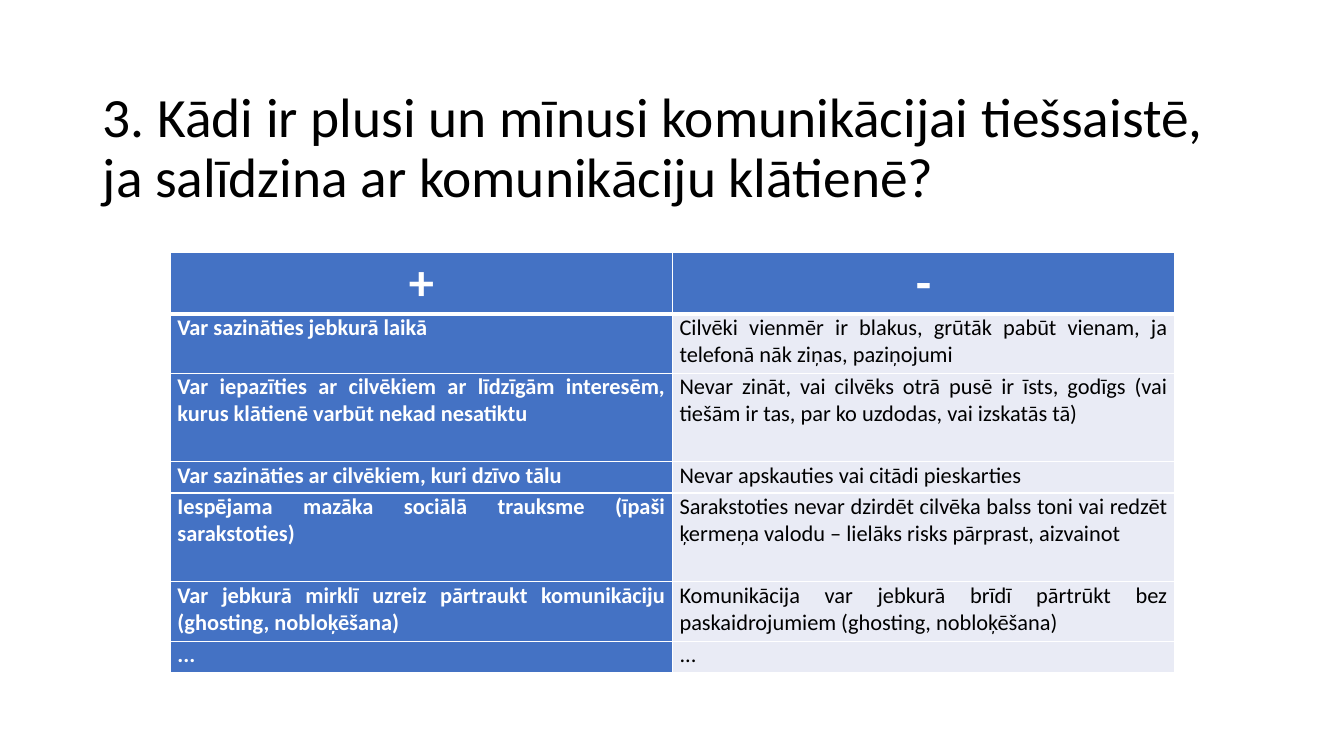
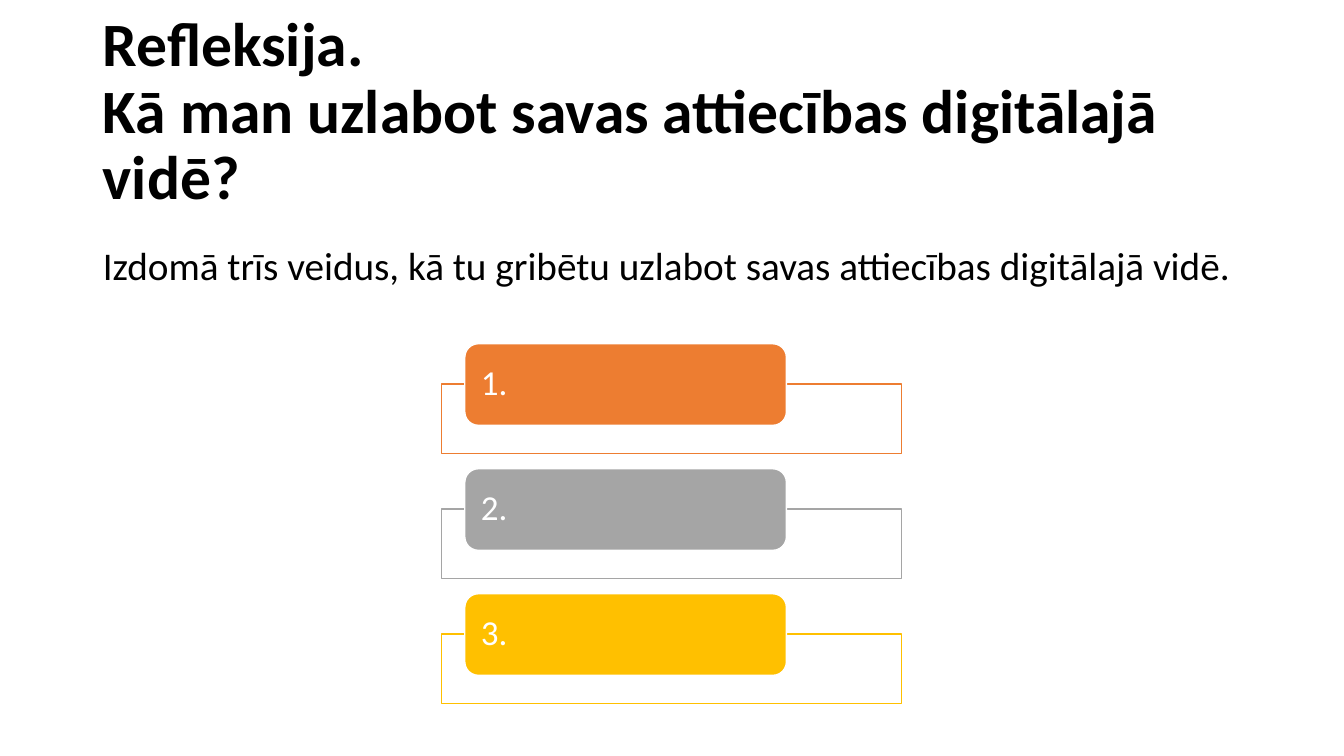
from dataclasses import dataclass

from lxml import etree
from pptx import Presentation
from pptx.dml.color import RGBColor
from pptx.enum.shapes import MSO_SHAPE
from pptx.enum.text import MSO_ANCHOR, MSO_AUTO_SIZE, PP_ALIGN
from pptx.oxml.ns import qn
from pptx.util import Inches, Pt

LEFT, CENTER, JUSTIFY = PP_ALIGN.LEFT, PP_ALIGN.CENTER, PP_ALIGN.JUSTIFY
TOP, MIDDLE = MSO_ANCHOR.TOP, MSO_ANCHOR.MIDDLE
NO_AUTOFIT = MSO_AUTO_SIZE.NONE
RECT, ROUNDED = MSO_SHAPE.RECTANGLE, MSO_SHAPE.ROUNDED_RECTANGLE
TITLE_AND_BODY, TITLE_ONLY = 1, 5


@dataclass(frozen=True)
class Theme:
    font: str = "Calibri"
    text: str = "000000"
    paper: str = "FFFFFF"
    header: str = "4472C4"
    cell: str = "E9EBF5"
    accents: tuple = ("ED7D31", "A5A5A5", "FFC000")
    title_size: float = 44
    long_title_size: float = 39.6
    body_size: float = 28
    label_size: float = 25
    sign_size: float = 36
    cell_size: float = 16
    line_spacing: float = 0.9


class Deck:
    """Holds the theme, the presentation and the current slide."""

    def __init__(self, theme):
        self.theme = theme
        self.prs = Presentation()
        self.prs.slide_width, self.prs.slide_height = Inches(13.33), Inches(7.5)
        self.slide = None

    def new_slide(self, layout):
        self.slide = self.prs.slides.add_slide(self.prs.slide_layouts[layout])

    @staticmethod
    def apply(target, values):
        for name, value in values.items():
            setattr(target, name, value)

    def put_text(self, frame, text, size, color, bold=False, **paragraph_format):
        paragraph = frame.paragraphs[0]
        paragraph.text = text
        self.apply(paragraph, paragraph_format)
        self.apply(paragraph.font, {"name": self.theme.font, "size": Pt(size), "bold": bold})
        paragraph.font.color.rgb = RGBColor.from_string(color)

    def placeholder(self, holder, box, text, size, anchor, bold=False):
        places = map(Inches, box)
        self.apply(holder, dict(zip(("left", "top", "width", "height"), places)))
        frame = holder.text_frame
        self.apply(frame, {"word_wrap": True, "auto_size": NO_AUTOFIT, "vertical_anchor": anchor})
        self.put_text(frame, text, size, self.theme.text, bold, alignment=LEFT,
                      line_spacing=self.theme.line_spacing, space_before=Pt(0))
        return frame.paragraphs[0]

    def title(self, text, top, size, bold=False):
        self.placeholder(self.slide.shapes.title, (0.92, top, 11.5, 1.45), text, size, MIDDLE, bold)

    def body(self, text):
        paragraph = self.placeholder(self.slide.placeholders[1], (0.92, 2.4, 11.5, 4.36),
                                     text, self.theme.body_size, TOP)
        # Plain paragraph without a bullet or hanging indent
        properties = paragraph._p.get_or_add_pPr()
        for name in ("marL", "indent"):
            properties.set(name, "0")
        properties.find(qn("a:spcBef")).addnext(etree.Element(qn("a:buNone")))

    def shape(self, kind, box, fill, line):
        shape = self.slide.shapes.add_shape(kind, *map(Inches, box))
        shape.shadow.inherit = False
        shape.fill.solid()
        shape.fill.fore_color.rgb = RGBColor.from_string(fill)
        shape.line.color.rgb = RGBColor.from_string(line)
        shape.line.width = Pt(1)
        return shape

    def answer_box(self, label, top, accent):
        paper = self.theme.paper
        self.shape(RECT, (4.38, top + 0.4, 4.56, 0.69), paper, accent)
        tab = self.shape(ROUNDED, (4.61, top, 3.19, 0.81), accent, paper)
        self.apply(tab.text_frame, {
            "word_wrap": True, "vertical_anchor": MIDDLE,
            "margin_left": Inches(0.12), "margin_right": Inches(0.12),
            "margin_top": 0, "margin_bottom": 0})
        self.put_text(tab.text_frame, label, self.theme.label_size, paper,
                      alignment=LEFT, line_spacing=self.theme.line_spacing)

    def cell_border(self, cell, side, width):
        line = etree.SubElement(cell._tc.get_or_add_tcPr(), qn(f"a:ln{side}"), w=str(Pt(width)))
        fill = etree.SubElement(line, qn("a:solidFill"))
        etree.SubElement(fill, qn("a:srgbClr"), val=self.theme.paper)

    def comparison(self, rows, heights):
        theme = self.theme
        table = self.slide.shapes.add_table(
            len(rows), 2, Inches(1.69), Inches(2.5), Inches(9.96), Inches(sum(heights))).table
        for row, height in zip(table.rows, heights):
            row.height = Inches(height)
        for i, texts in enumerate(rows):
            for j, text in enumerate(texts):
                cell = table.cell(i, j)
                self.apply(cell, {
                    "margin_left": Inches(0.07), "margin_right": Inches(0.07),
                    "margin_top": 0, "margin_bottom": 0, "vertical_anchor": TOP})
                # The rule under the header row is thicker than the others
                widths = {"L": 1, "R": 1, "T": 3 if i == 1 else 1, "B": 3 if i == 0 else 1}
                for side, width in widths.items():
                    self.cell_border(cell, side, width)
                strong = i == 0 or j == 0
                cell.fill.solid()
                cell.fill.fore_color.rgb = RGBColor.from_string(theme.header if strong else theme.cell)
                self.put_text(cell.text_frame, text,
                              theme.cell_size if i else theme.sign_size,
                              theme.paper if strong else theme.text, strong,
                              alignment=JUSTIFY if i else CENTER, space_after=Pt(6))


PLUS_MINUS = [
    ("+", "-"),
    ("Var sazināties jebkurā laikā",
     "Cilvēki vienmēr ir blakus, grūtāk pabūt vienam, ja telefonā nāk ziņas, paziņojumi"),
    ("Var iepazīties ar cilvēkiem ar līdzīgām interesēm, kurus klātienē varbūt nekad nesatiktu",
     "Nevar zināt, vai cilvēks otrā pusē ir īsts, godīgs "
     "(vai tiešām ir tas, par ko uzdodas, vai izskatās tā)"),
    ("Var sazināties ar cilvēkiem, kuri dzīvo tālu",
     "Nevar apskauties vai citādi pieskarties"),
    ("Iespējama mazāka sociālā trauksme (īpaši sarakstoties)",
     "Sarakstoties nevar dzirdēt cilvēka balss toni vai redzēt ķermeņa valodu – "
     "lielāks risks pārprast, aizvainot"),
    ("Var jebkurā mirklī uzreiz pārtraukt komunikāciju (ghosting, nobloķēšana)",
     "Komunikācija var jebkurā brīdī pārtrūkt bez paskaidrojumiem (ghosting, nobloķēšana)"),
    ("...", "..."),
]


def main():
    theme = Theme()
    deck = Deck(theme)

    # Pros and cons of online communication
    deck.new_slide(TITLE_ONLY)
    deck.title("3. Kādi ir plusi un mīnusi komunikācijai tiešsaistē, "
               "ja salīdzina ar komunikāciju klātienē?", 0.76, theme.long_title_size)
    deck.comparison(PLUS_MINUS, (0.61, 0.59, 0.88, 0.31, 0.88, 0.59, 0.31))

    # Reflection with three answers to fill in
    deck.new_slide(TITLE_AND_BODY)
    deck.title("Refleksija.\vKā man uzlabot savas attiecības digitālajā vidē?",
               0.4, theme.title_size, bold=True)
    deck.body("Izdomā trīs veidus, kā tu gribētu uzlabot savas attiecības digitālajā vidē.")
    for i, accent in enumerate(theme.accents):
        deck.answer_box(f"{i + 1}.", 3.41 + i * 1.24, accent)

    deck.prs.save("out.pptx")


if __name__ == "__main__":
    main()
